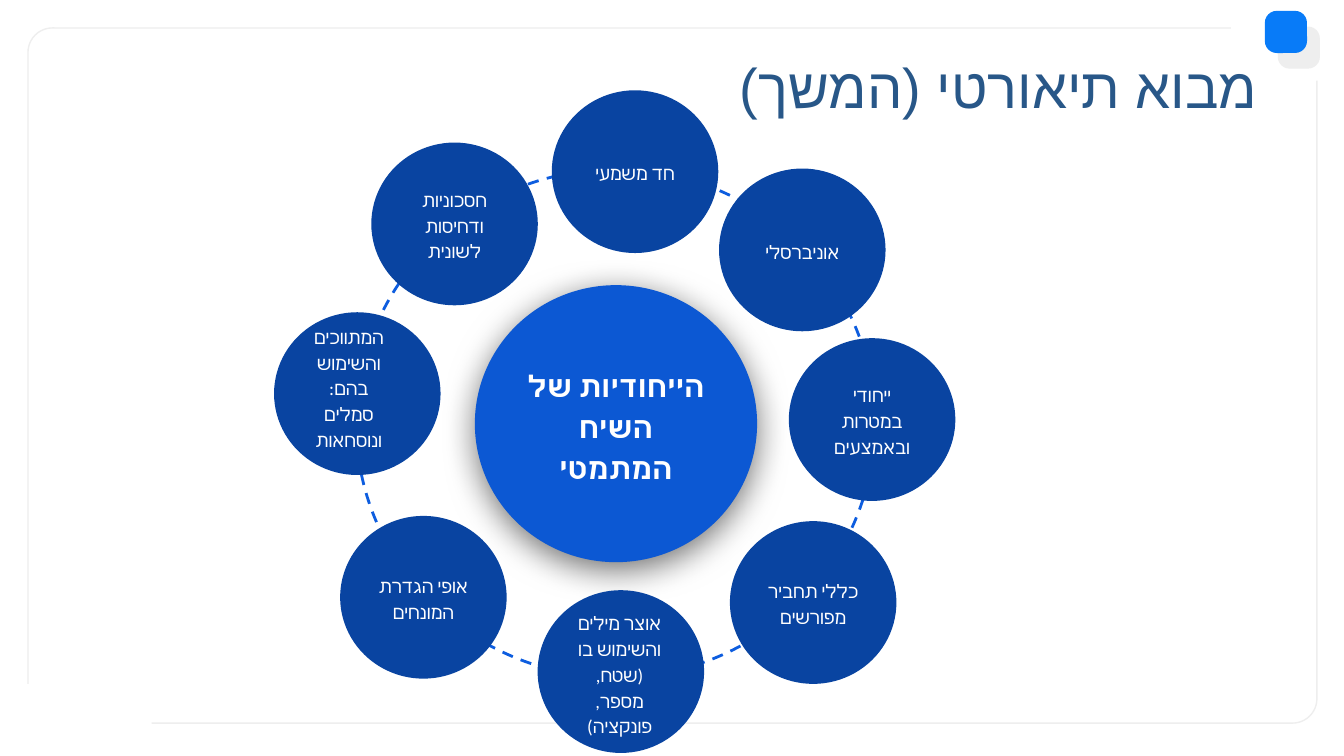
from dataclasses import dataclass

from lxml.etree import SubElement
from pptx import Presentation
from pptx.dml.color import RGBColor
from pptx.enum.dml import MSO_LINE
from pptx.enum.shapes import MSO_SHAPE as Preset
from pptx.enum.text import MSO_ANCHOR as Anchor, PP_ALIGN as Align
from pptx.oxml.ns import qn
from pptx.util import Pt


@dataclass(frozen=True)
class Theme:
    white: str = "FFFFFF"
    grey: str = "EEEEEE"
    accent: str = "087BF8"
    title: str = "285788"
    ring: str = "0D5DDF"
    hub: str = "0C58D3"
    satellite: str = "0944A1"
    shadow: str = "000000"
    title_font: str = "Arial"
    body_font: str = "Calibri"
    title_size: int = 30
    hub_size: int = 16
    body_size: int = 10


class SlideBuilder:
    def __init__(self, slide, theme):
        self.slide = slide
        self.theme = theme

    def shape(self, preset, box, fill=None, line=None, width=0.75, dash=None, corner=None):
        shape = self.slide.shapes.add_shape(preset, *map(Pt, box))
        shape.shadow.inherit = False
        if corner is not None:
            shape.adjustments[0] = corner
        if fill:
            shape.fill.solid()
            shape.fill.fore_color.rgb = RGBColor.from_string(fill)
        else:
            shape.fill.background()
        if line:
            shape.line.color.rgb = RGBColor.from_string(line)
            shape.line.width = Pt(width)
            if dash:
                shape.line.dash_style = dash
        else:
            shape.line.fill.background()
        return shape

    def add_text(self, shape, text, size, color, font, align=Align.CENTER, anchor=Anchor.MIDDLE,
                 inset=(7.2, 7.2), spacing=1.15, bold=False):
        frame = shape.text_frame
        frame.word_wrap = True
        frame.vertical_anchor = anchor
        frame.margin_left = frame.margin_right = Pt(inset[0])
        frame.margin_top = frame.margin_bottom = Pt(inset[1])
        paragraph = frame.paragraphs[0]
        paragraph.alignment = align
        paragraph.line_spacing = spacing
        paragraph._p.get_or_add_pPr().set("rtl", "1")
        run = paragraph.add_run()
        run.text = text
        run.font.size = Pt(size)
        run.font.bold = bold
        run.font.color.rgb = RGBColor.from_string(color)
        run.font.name = font
        SubElement(run._r.get_or_add_rPr(), qn("a:cs")).set("typeface", font)

    def title(self, text, box):
        theme = self.theme
        shape = self.slide.shapes.add_textbox(*map(Pt, box))
        self.add_text(shape, text, theme.title_size, theme.title, theme.title_font,
                      align=Align.RIGHT, anchor=Anchor.TOP, spacing=1.0)

    def label(self, text, box):
        theme = self.theme
        shape = self.slide.shapes.add_textbox(*map(Pt, box))
        self.add_text(shape, text, theme.body_size, theme.white, theme.body_font,
                      anchor=Anchor.TOP, inset=(7.2, 3.6))

    def satellite(self, left, top, text=None):
        theme = self.theme
        shape = self.shape(Preset.OVAL, (left, top, 89.2, 87.2), theme.satellite)
        if text:
            self.add_text(shape, text, theme.body_size, theme.white, theme.body_font)

    def hub(self, text, box):
        theme = self.theme
        shape = self.shape(Preset.OVAL, box, theme.hub)
        effects = shape._element.spPr.find(qn("a:effectLst"))
        shadow = SubElement(effects, qn("a:outerShdw"), blurRad=str(Pt(18)), dist=str(Pt(4)),
                            dir="5400000", algn="bl", rotWithShape="0")
        color = SubElement(shadow, qn("a:srgbClr"), val=theme.shadow)
        SubElement(color, qn("a:alpha"), val="55000")
        self.add_text(shape, text, theme.hub_size, theme.white, theme.body_font,
                      inset=(5, 5), bold=True)

    def backdrop(self):
        theme = self.theme
        self.shape(Preset.ROUNDED_RECTANGLE, (15, 15, 690.5, 372.4), line=theme.grey, corner=0.035)
        self.shape(Preset.RECTANGLE, (659.5, 2.2, 57.6, 41), theme.white)
        for left, top, color in ((684.5, 14.2, theme.grey), (677.6, 5.8, theme.accent)):
            self.shape(Preset.ROUNDED_RECTANGLE, (left, top, 22.6, 22.6), color, corner=0.284)
        self.shape(Preset.RECTANGLE, (4.3, 366.5, 77, 38.5), theme.white)


SATELLITES = (
    (391, 279.2, "כללי תחביר מפורשים"),
    (422.6, 181.2, "ייחודי במטרות ובאמצעים"),
    (385.2, 90.3, "אוניברסלי"),
    (288, 316.2, None),
    (182.2, 276.4, "אופי הגדרת המונחים"),
    (146.8, 167.3, None),
    (198.9, 76.4, "חסכוניות ודחיסות לשונית"),
    (295.6, 48.4, "חד משמעי"),
)
LABELS = (
    ("המתווכים והשימוש בהם: סמלים ונוסחאות", (157, 169.2, 59.8, 76.3)),
    ("אוצר מילים והשימוש בו (שטח, מספר, פונקציה)", (300.2, 322.6, 63.4, 76.3)),
)


def main():
    presentation = Presentation()
    presentation.slide_width, presentation.slide_height = Pt(720), Pt(405)
    theme = Theme()
    builder = SlideBuilder(presentation.slides.add_slide(presentation.slide_layouts[6]), theme)
    builder.backdrop()
    builder.title("מבוא תיאורטי (המשך)", (222.5, 20.9, 458.6, 45.4))
    builder.shape(Preset.OVAL, (190.8, 90.7, 277.9, 272.2), line=theme.ring, width=1.5,
                  dash=MSO_LINE.DASH)
    builder.hub("הייחודיות של השיח המתמטי", (254.4, 152.8, 151.2, 148.4))
    for left, top, text in SATELLITES:
        builder.satellite(left, top, text)
    for text, box in LABELS:
        builder.label(text, box)
    presentation.save("out.pptx")


if __name__ == "__main__":
    main()
